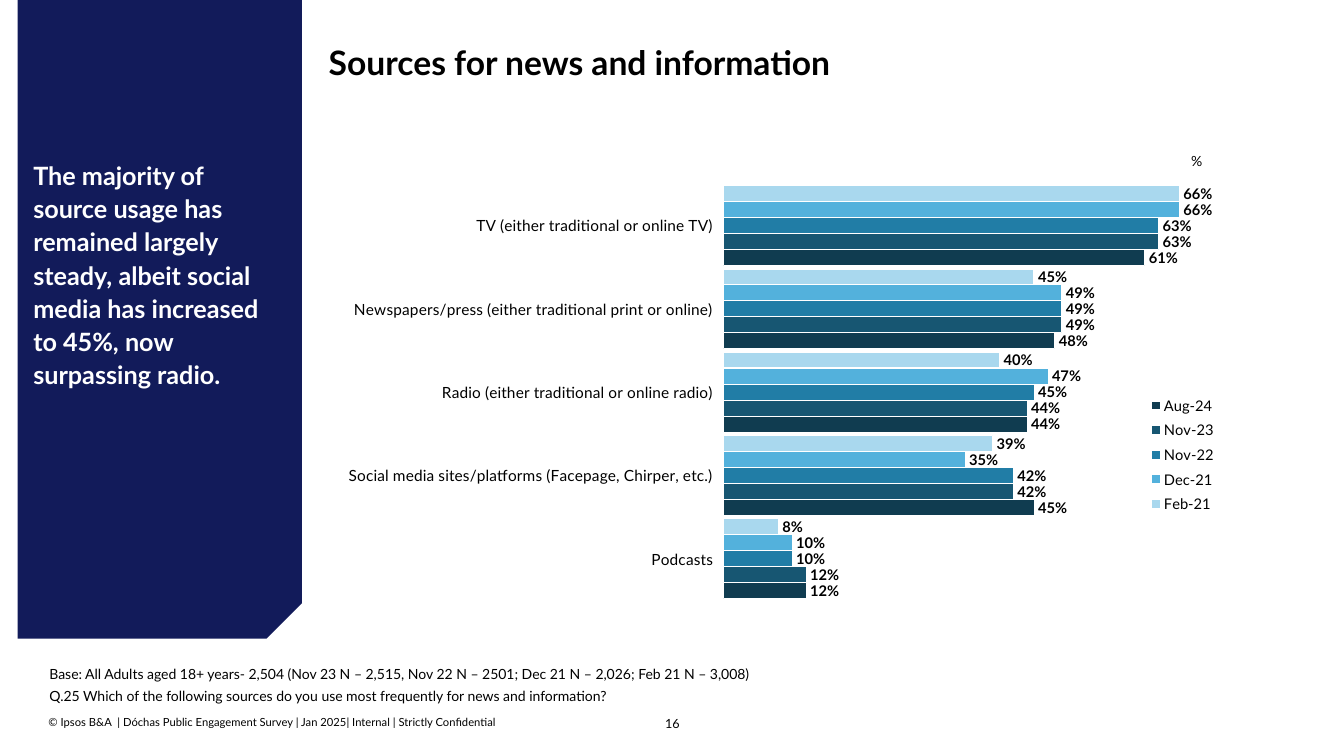
from lxml import etree
from pptx import Presentation
from pptx.chart.data import CategoryChartData
from pptx.dml.color import RGBColor
from pptx.enum.chart import XL_CHART_TYPE, XL_LABEL_POSITION, XL_LEGEND_POSITION, XL_TICK_MARK
from pptx.enum.shapes import MSO_SHAPE
from pptx.enum.text import MSO_ANCHOR, PP_ALIGN
from pptx.oxml import parse_xml
from pptx.oxml.ns import nsdecls, qn
from pptx.util import Inches, Pt

COLORS = {
    "text": "000000",
    "white": "FFFFFF",
    "panel": "121B5A",
    "Feb-21": "A9D8EE",
    "Dec-21": "53B1DC",
    "Nov-22": "217DA6",
    "Nov-23": "175672",
    "Aug-24": "103C50",
}
FONT = "Lato"


def style_font(font, size, bold=False, color="text"):
    font.name = FONT
    font.size = Pt(size)
    font.bold = bold
    font.color.rgb = RGBColor.from_string(COLORS[color])


def make_layout(left, top, width, height, inner=False):
    target = '<c:layoutTarget val="inner"/>' if inner else ""
    return parse_xml(
        f'<c:layout {nsdecls("c")}><c:manualLayout>{target}'
        '<c:xMode val="edge"/><c:yMode val="edge"/>'
        f'<c:x val="{left}"/><c:y val="{top}"/><c:w val="{width}"/><c:h val="{height}"/>'
        "</c:manualLayout></c:layout>"
    )


deck = Presentation()
deck.slide_width = Inches(13.33)
deck.slide_height = Inches(7.5)
page = deck.slides.add_slide(deck.slide_layouts[5])

title = page.shapes.title
title.left, title.top = Inches(3.16), Inches(0.41)
title.width, title.height = Inches(9.9), Inches(0.78)
title.text_frame.vertical_anchor = MSO_ANCHOR.TOP
title.text_frame.word_wrap = True
para = title.text_frame.paragraphs[0]
para.alignment = PP_ALIGN.LEFT
para.line_spacing = 0.9
span = para.add_run()
span.text = "Sources for news and information"
style_font(span.font, 24, True)

chart_data = CategoryChartData(number_format="0")
chart_data.categories = [
    "TV (either traditional or online TV)",
    "Newspapers/press (either traditional print or online)",
    "Radio (either traditional or online radio)",
    "Social media sites/platforms (Facepage, Chirper, etc.)",
    "Podcasts",
]
waves = {
    "Feb-21": [66, 45, 40, 39, 8],
    "Dec-21": [66, 49, 47, 35, 10],
    "Nov-22": [63, 49, 45, 42, 10],
    "Nov-23": [63, 49, 44, 42, 12],
    "Aug-24": [61, 48, 44, 45, 12],
}
for wave, values in waves.items():
    chart_data.add_series(wave, values)
chart = page.shapes.add_chart(
    XL_CHART_TYPE.BAR_CLUSTERED,
    Inches(1.48), Inches(1.68), Inches(10.62), Inches(4.29), chart_data,
).chart
chart.has_title = False
style_font(chart.font, 10.5, True)

plot = chart.plots[0]
plot.gap_width = 20
plot.overlap = 0
plot.vary_by_categories = False
for series in plot.series:
    series.format.fill.solid()
    series.format.fill.fore_color.rgb = RGBColor.from_string(COLORS[series.name])
    series.format.line.color.rgb = RGBColor.from_string(COLORS["white"])
    series.format.line.width = Pt(1 if series.name == "Feb-21" else 0.75)
    labels = series.data_labels
    labels.show_value = True
    labels.number_format = '#"%"'
    labels.number_format_is_linked = False
    labels.position = XL_LABEL_POSITION.OUTSIDE_END
    style_font(labels.font, 10.5, True)

category_axis = chart.category_axis
category_axis.reverse_order = True
category_axis.major_tick_mark = XL_TICK_MARK.OUTSIDE
category_axis.format.line.fill.background()
style_font(category_axis.tick_labels.font, 11)
value_axis = chart.value_axis
value_axis.minimum_scale = 0
value_axis.maximum_scale = 70
value_axis.has_major_gridlines = False
value_axis.visible = False

chart.has_legend = True
legend = chart.legend
legend.position = XL_LEGEND_POSITION.RIGHT
legend.include_in_layout = False
style_font(legend.font, 10.5)
legend_position = legend._element.find(qn("c:legendPos"))
legend_position.addnext(make_layout(0.93, 0.51, 0.07, 0.3))
plot_area = chart._chartSpace.chart.plotArea
for layout in plot_area.findall(qn("c:layout")):
    plot_area.remove(layout)
plot_area.insert(0, make_layout(0.536, 0.034, 0.452, 0.963, True))

panel = page.shapes.add_shape(
    MSO_SHAPE.SNIP_1_RECTANGLE, Inches(-1.67), Inches(1.67), Inches(6.51), Inches(2.82)
)
panel.rotation = 90
panel.adjustments[0] = 0.124
panel.shadow.inherit = False
panel.fill.solid()
panel.fill.fore_color.rgb = RGBColor.from_string(COLORS["panel"])
panel.line.fill.background()

finding = (
    "The majority of source usage has remained largely steady, albeit social "
    "media has increased to 45%, now surpassing radio."
)
base_lines = [
    "Base: All Adults aged 18+ years- 2,504 (Nov 23 N – 2,515, Nov 22 N – 2501; "
    "Dec 21 N – 2,026; Feb 21 N – 3,008)",
    "Q.25 Which of the following sources do you use most frequently for news and information?",
]
copyright_line = (
    "© Ipsos B&A  | Dóchas Public Engagement Survey | Jan 2025| Internal | Strictly Confidential"
)
text_boxes = [
    (0.33, 1.56, 2.31, 2.35, [finding], 18, True, "white", PP_ALIGN.LEFT, 1.1, 0),
    (11.72, 1.51, 0.3, 0.17, ["%"], 10, False, "text", PP_ALIGN.CENTER, 1, 0),
    (0.49, 6.58, 10.22, 0.46, base_lines, 10, False, "text", PP_ALIGN.LEFT, 1.15, 2),
    (0.48, 7.1, 5.8, 0.13, [copyright_line], 8, False, "text", PP_ALIGN.LEFT, 1, 0),
    (6.4, 7.09, 0.54, 0.15, ["16"], 9, False, "text", PP_ALIGN.CENTER, 1.1, 0),
]
for left, top, width, height, lines, size, bold, color, align, spacing, after in text_boxes:
    box = page.shapes.add_textbox(Inches(left), Inches(top), Inches(width), Inches(height))
    frame = box.text_frame
    frame.word_wrap = True
    frame.margin_left = frame.margin_right = frame.margin_top = frame.margin_bottom = 0
    for index, line in enumerate(lines):
        para = frame.add_paragraph() if index else frame.paragraphs[0]
        para.alignment = align
        para.line_spacing = spacing
        para.space_after = Pt(after)
        span = para.add_run()
        span.text = line
        style_font(span.font, size, bold, color)

deck.save("out.pptx")
